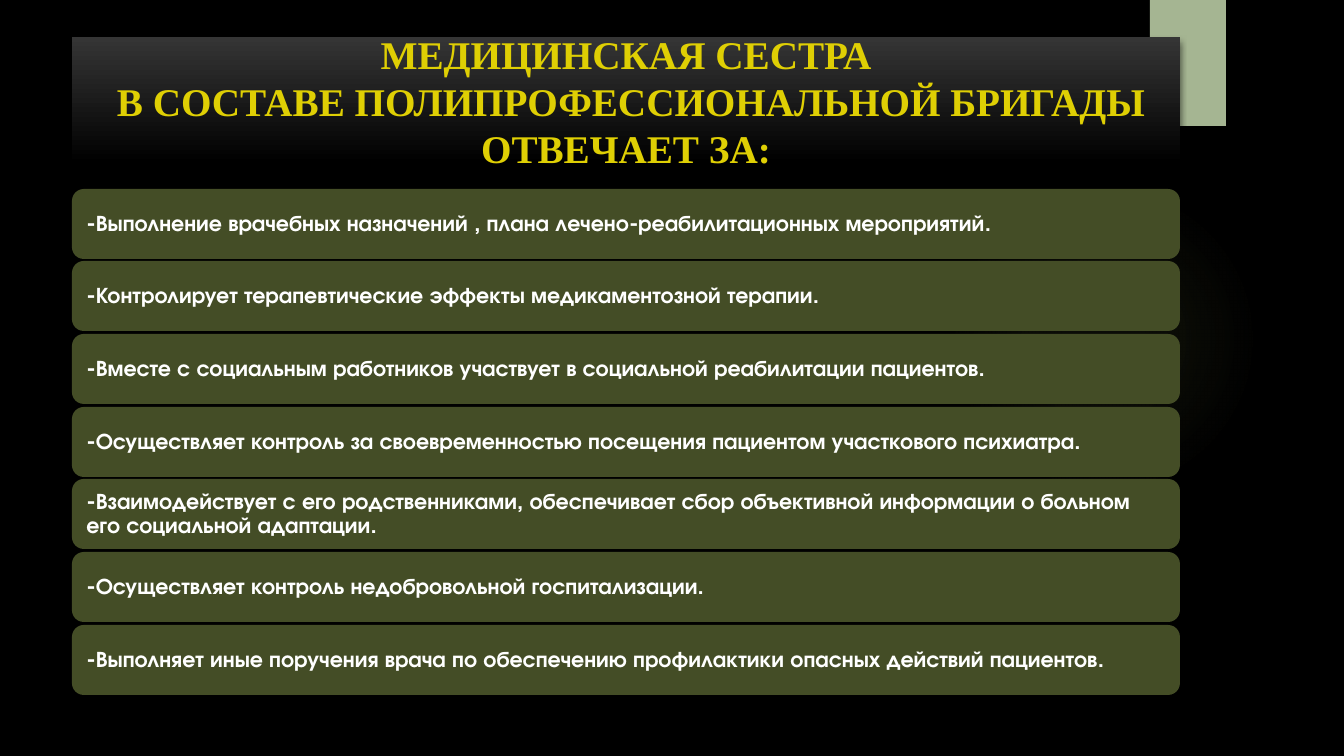
from dataclasses import dataclass
from typing import Optional

from lxml.etree import SubElement
from pptx import Presentation
from pptx.dml.color import RGBColor as Rgb
from pptx.enum.shapes import MSO_SHAPE as Kind
from pptx.enum.text import MSO_ANCHOR as Anchor, PP_ALIGN as Align
from pptx.oxml.ns import qn
from pptx.util import Emu, Pt

SCALE = 914400 / 100.8
HUES = {"back": "000000", "glow": "9EB160", "tab": "A5B592", "top": "353535",
        "row": "444D26", "gold": "DFCF04", "white": "FFFFFF"}
TITLE = "МЕДИЦИНСКАЯ СЕСТРА\v В СОСТАВЕ ПОЛИПРОФЕССИОНАЛЬНОЙ БРИГАДЫ ОТВЕЧАЕТ ЗА:"
DUTIES = [
    "-Выполнение врачебных назначений , плана лечено-реабилитационных мероприятий.",
    "-Контролирует терапевтические эффекты медикаментозной терапии.",
    "-Вместе с социальным работников участвует в социальной реабилитации пациентов.",
    "-Осуществляет контроль за своевременностью посещения пациентом участкового психиатра.",
    "-Взаимодействует с его родственниками, обеспечивает сбор объективной информации о больном его социальной адаптации.",
    "-Осуществляет контроль недобровольной госпитализации.",
    "-Выполняет иные поручения врача по обеспечению профилактики опасных действий пациентов.",
]


@dataclass(frozen=True)
class Stop:
    at: int
    hue: str
    alpha: int = 100


@dataclass(frozen=True)
class Shade:
    alpha: int
    blur: int
    dist: int


@dataclass(frozen=True)
class Box:
    left: int
    top: int
    width: int
    height: int
    kind: Kind = Kind.RECTANGLE
    hue: str = "back"
    stops: tuple[Stop, ...] = ()
    round: bool = False
    shade: Optional[Shade] = None


def px(size: int) -> Emu:
    return Emu(int(size * SCALE))


def add_hue(node, hue: str, alpha: int) -> None:
    tint = SubElement(node, qn("a:srgbClr"), val=HUES[hue])
    if alpha < 100:
        SubElement(tint, qn("a:alpha"), val=str(alpha * 1000))


def blend(shape, stops: tuple[Stop, ...], round: bool) -> None:
    shape.fill.gradient()
    grad = shape.element.spPr.find(qn("a:gradFill"))
    for node in list(grad):
        grad.remove(node)
    group = SubElement(grad, qn("a:gsLst"))
    for stop in stops:
        node = SubElement(group, qn("a:gs"), pos=str(stop.at * 1000))
        add_hue(node, stop.hue, stop.alpha)
    if round:
        way = SubElement(grad, qn("a:path"), path="circle")
        SubElement(way, qn("a:fillToRect"), l="50000", t="50000", r="50000", b="50000")
    else:
        SubElement(grad, qn("a:lin"), ang="5400000", scaled="0")


def draw(slide, box: Box):
    shape = slide.shapes.add_shape(
        box.kind, px(box.left), px(box.top), px(box.width), px(box.height))
    shape.line.fill.background()
    shape.shadow.inherit = False
    if box.stops:
        blend(shape, box.stops, box.round)
    else:
        shape.fill.solid()
        shape.fill.fore_color.rgb = Rgb.from_string(HUES[box.hue])
    if box.kind == Kind.ROUNDED_RECTANGLE:
        shape.adjustments[0] = 0.17
    if box.shade:
        group = shape.element.spPr.find(qn("a:effectLst"))
        node = SubElement(group, qn("a:outerShdw"), blurRad=str(Pt(box.shade.blur)),
                          dist=str(Pt(box.shade.dist)), dir="5400000", rotWithShape="0")
        add_hue(node, "back", box.shade.alpha)
    return shape


def write(shape, text: str, *, font: str, size: int, hue: str, align: Align,
          side: int, edge: int, space: float) -> None:
    frame = shape.text_frame
    frame.word_wrap = True
    frame.vertical_anchor = Anchor.MIDDLE
    frame.margin_left = frame.margin_right = px(side)
    frame.margin_top = frame.margin_bottom = px(edge)
    para = frame.paragraphs[0]
    para.text = text
    para.alignment = align
    para.line_spacing = space
    for run in para.runs:
        run.font.name = font
        run.font.size = Pt(size)
        run.font.bold = True
        run.font.color.rgb = Rgb.from_string(HUES[hue])


def main() -> None:
    deck = Presentation()
    deck.slide_width, deck.slide_height = px(1344), px(756)
    slide = deck.slides.add_slide(deck.slide_layouts[6])
    slide.background.fill.solid()
    slide.background.fill.fore_color.rgb = Rgb.from_string(HUES["back"])

    glow = (Stop(0, "glow", 7), Stop(36, "glow", 6), Stop(69, "glow", 0))
    draw(slide, Box(949, 184, 310, 310, Kind.OVAL, stops=glow, round=True))
    draw(slide, Box(1150, 0, 76, 126, hue="tab", shade=Shade(45, 3, 2)))
    head = draw(slide, Box(72, 37, 1108, 127, shade=Shade(60, 5, 3),
                           stops=(Stop(0, "top"), Stop(100, "back"))))
    write(head, TITLE, font="Times New Roman", size=28, hue="gold",
          align=Align.CENTER, side=10, edge=5, space=1.0)
    for i, duty in enumerate(DUTIES):
        row = draw(slide, Box(72, 189 + 436 * i // 6, 1108, 70,
                              Kind.ROUNDED_RECTANGLE, "row"))
        write(row, duty, font="TeX Gyre Adventor", size=16, hue="white",
              align=Align.LEFT, side=11, edge=11, space=0.9)
    deck.save("out.pptx")


if __name__ == "__main__":
    main()
